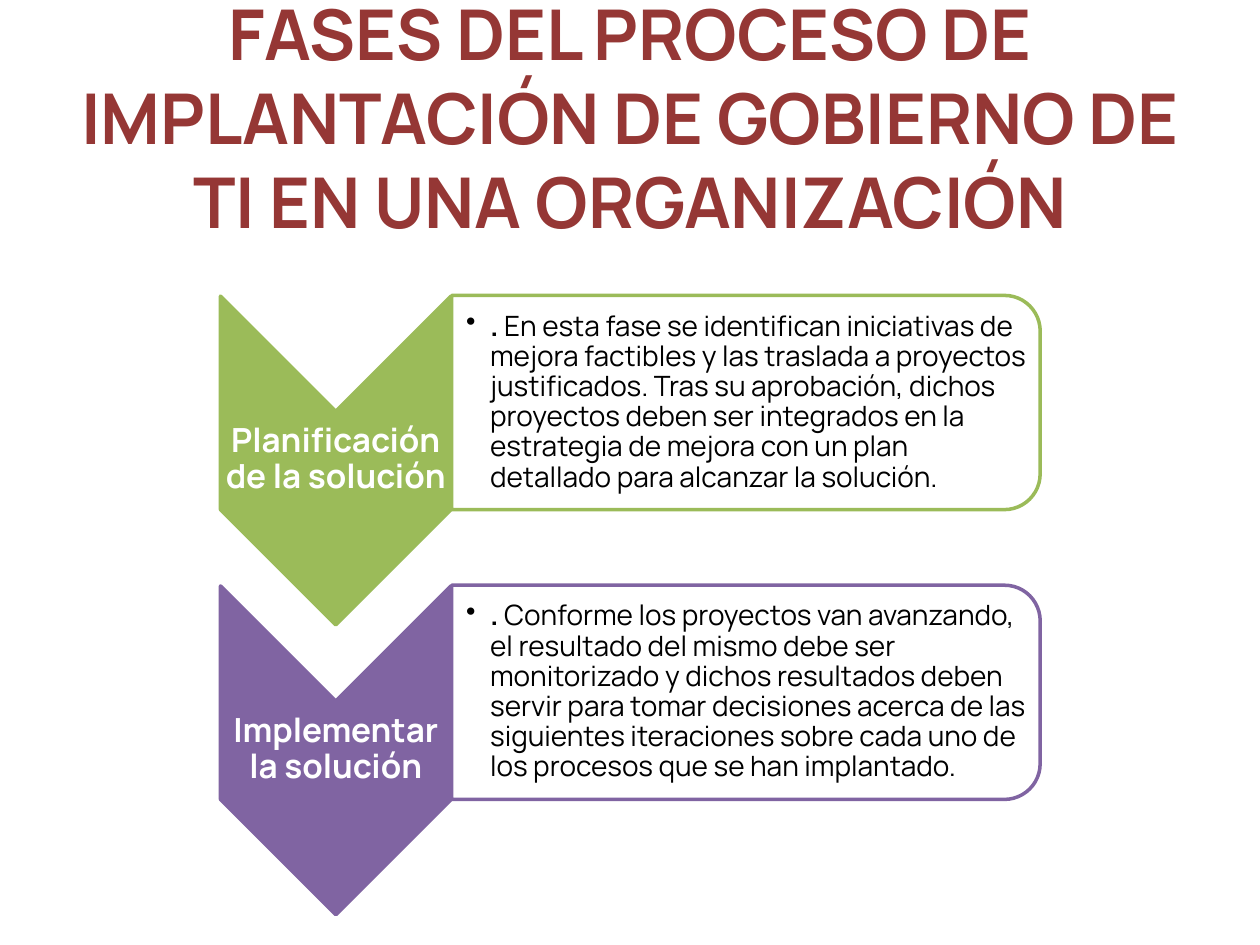
from lxml import etree
from pptx import Presentation
from pptx.dml.color import RGBColor
from pptx.enum import shapes, text
from pptx.oxml.ns import qn
from pptx.util import Inches, Pt

RED = RGBColor(0x95, 0x37, 0x35)
GREEN = RGBColor(0x9B, 0xBB, 0x59)
PURPLE = RGBColor(0x80, 0x64, 0xA2)
WHITE = RGBColor(0xFF, 0xFF, 0xFF)
BLACK = RGBColor(0x00, 0x00, 0x00)

PHASES = [
    ("Planificación de la solución", GREEN,
     " En esta fase se identifican iniciativas de mejora factibles y las traslada a "
     "proyectos justificados. Tras su aprobación, dichos proyectos deben ser integrados "
     "en la estrategia de mejora con un plan detallado para alcanzar la solución."),
    ("Implementar la solución", PURPLE,
     " Conforme los proyectos van avanzando, el resultado del mismo debe ser "
     "monitorizado y dichos resultados deben servir para tomar decisiones acerca de las "
     "siguientes iteraciones sobre cada uno de los procesos que se han implantado."),
]
FIRST_TOP = 2.43
PHASE_STEP = 2.3

prs = Presentation()
prs.slide_width, prs.slide_height = Inches(10), Inches(7.5)
slide = prs.slides.add_slide(prs.slide_layouts[6])


def add_turned(kind, left, top, width, height, fill, line):
    shape = slide.shapes.add_shape(
        kind, Inches(left), Inches(top), Inches(width), Inches(height))
    shape.rotation = 90
    shape.shadow.inherit = False
    shape.fill.solid()
    shape.fill.fore_color.rgb = fill
    shape.line.color.rgb = line
    shape.line.width = Pt(2)
    return shape


def add_words(box, runs, size, color, spacing, align, insets):
    frame = slide.shapes.add_textbox(*[Inches(v) for v in box]).text_frame
    sides = ("margin_left", "margin_top", "margin_right", "margin_bottom")
    settings = dict(zip(sides, [Inches(v) for v in insets]))
    settings.update(word_wrap=True, vertical_anchor=text.MSO_ANCHOR.MIDDLE)
    for key, value in settings.items():
        setattr(frame, key, value)
    paragraph = frame.paragraphs[0]
    paragraph.alignment = align
    paragraph.line_spacing = spacing
    for words, bold in runs:
        run = paragraph.add_run()
        run.text = words
        for key, value in {"name": "Manrope", "size": Pt(size), "bold": bold}.items():
            setattr(run.font, key, value)
        run.font.color.rgb = color
    return paragraph


add_words((0.5, 0.3, 9, 1.25),
          [("FASES DEL PROCESO DE IMPLANTACIÓN DE GOBIERNO DE TI EN UNA ORGANIZACIÓN", True)],
          40, RED, 1.0, text.PP_ALIGN.CENTER, (0.1, 0.05, 0.1, 0.05))

for index, (phase, accent, description) in enumerate(PHASES):
    top = FIRST_TOP + index * PHASE_STEP

    add_turned(shapes.MSO_SHAPE.CHEVRON, 1.36, top + 0.31, 2.61, 1.83, accent, accent)
    add_words((1.75, top + 0.83, 1.83, 0.78), [(phase, True)],
              19, WHITE, 0.9, text.PP_ALIGN.CENTER, (0.01,) * 4)

    panel = add_turned(shapes.MSO_SHAPE.ROUND_2_SAME_RECTANGLE,
                       5.07, top - 1.57, 1.7, 4.67, WHITE, accent)
    panel_color = panel.fill._xPr.find(qn("a:solidFill"))[0]
    etree.SubElement(panel_color, qn("a:alpha"), val="90000")

    detail = add_words((3.58, top, 4.59, 1.53), [(".", True), (description, False)],
                       16, BLACK, 0.9, text.PP_ALIGN.LEFT, (0.12, 0.01, 0.01, 0.01))
    properties = detail._p.get_or_add_pPr()
    properties.set("marL", str(Inches(0.19)))
    properties.set("indent", str(Inches(-0.19)))
    etree.SubElement(properties, qn("a:buChar"), char="•")

prs.save("out.pptx")
